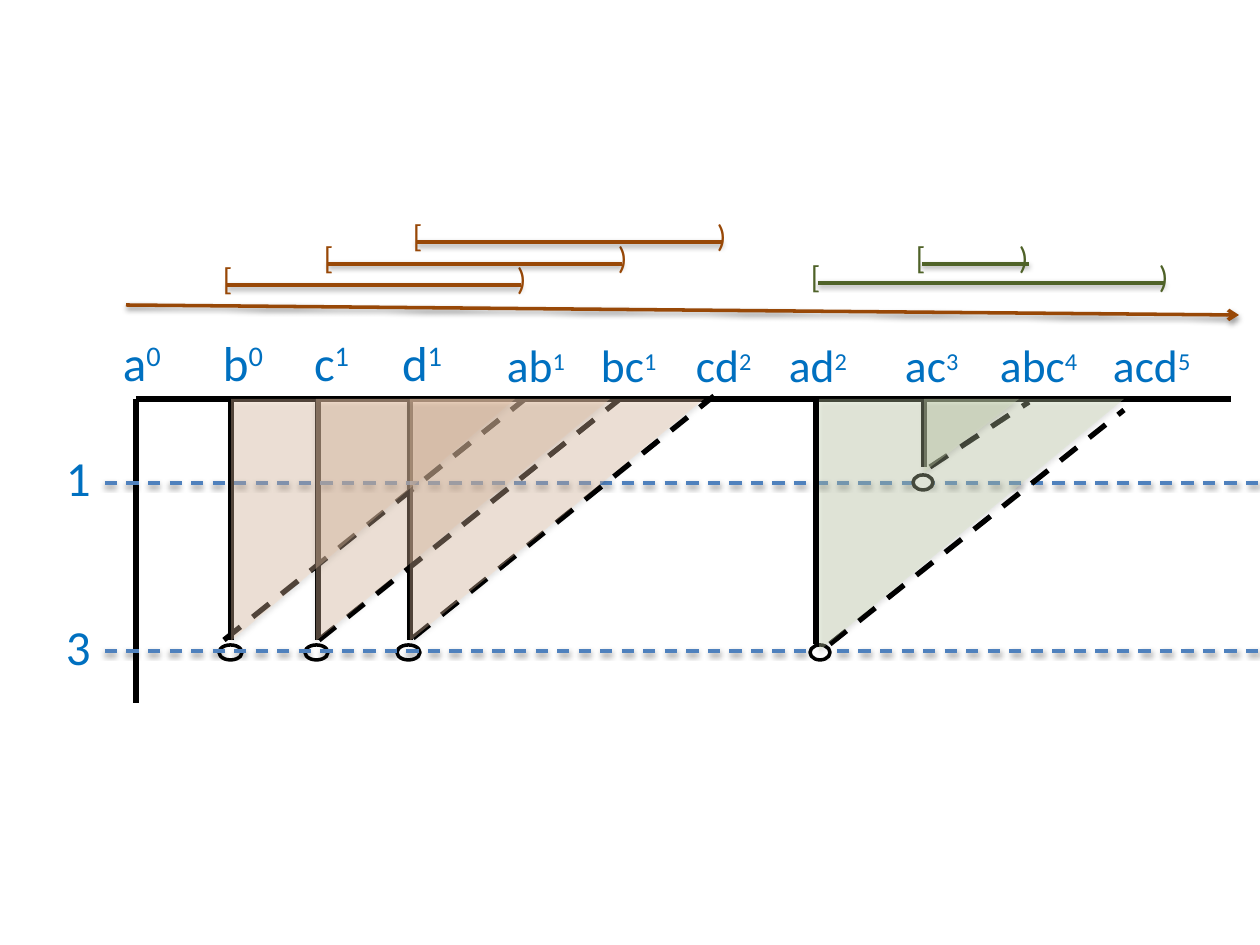
"""Build the slide of simplex lifetimes drawn as a merge diagram with bars."""
from lxml import etree
from pptx import Presentation
from pptx import util as u
from pptx.dml.color import RGBColor
from pptx.enum import dml, shapes, text
from pptx.oxml import ns

BLUE = RGBColor(0x00, 0x70, 0xC0)
LEVEL_BLUE = RGBColor(0x4F, 0x81, 0xBD)
BLACK = RGBColor(0, 0, 0)
WHITE = RGBColor(255, 255, 255)
BROWN = RGBColor(0x98, 0x48, 0x07)
GREEN = RGBColor(0x4F, 0x62, 0x28)
PEACH = RGBColor(0xFC, 0xD5, 0xB5)
LIME = RGBColor(0xD7, 0xE4, 0xBD)

PX = 914400 / 126
LINE_SHADOW = (38, 20000)
TRIANGLE_SHADOW = (35, 23000)

# name, exponent, left, width
VERTICES = [("a", "0", 110, 79), ("b", "0", 210, 79), ("c", "1", 301, 79), ("d", "1", 389, 79)]
SIMPLICES = [("ab", "1", 494, 113), ("bc", "1", 588, 84), ("cd", "2", 683, 84),
             ("ad", "2", 776, 126), ("ac", "3", 892, 126),
             ("abc", "4", 987, 127), ("acd", "5", 1100, 127)]
LEVELS = [("3", 610, 651), ("1", 441, 483)]
AXES = [(136, 399, 1231, 399), (136, 399, 136, 703)]

# stem (x, top, bottom), slope (x1, y1, x2, y2), ring and triangle (x, y, w, h)
BROWN_BRANCHES = [
    ((231, 399, 640), (224, 640, 525, 399), (219, 645, 23, 15), (231, 399, 284, 242)),
    ((318, 399, 640), (319, 640, 620, 399), (305, 645, 23, 15), (316, 399, 294, 242)),
    ((410, 399, 640), (413, 638, 714, 396), (397, 645, 23, 15), (410, 399, 294, 242)),
]
GREEN_BRANCHES = [
    ((816, 402, 644), (830, 644, 1124, 410), (810, 645, 20, 15), (819, 399, 305, 252)),
    ((924, 399, 467), (930, 467, 1029, 402), (913, 475, 20, 15), (924, 399, 95, 73)),
]

# start, end, y, colour, "[" (left, width), ")" (left, width), inset
INTERVALS = [
    (227, 521, 285, BROWN, (210, 42), (504, 35), 13),
    (328, 622, 264, BROWN, (311, 42), (605, 35), 13),
    (417, 722, 242, BROWN, (400, 44), (704, 36), 13),
    (818, 1164, 283, GREEN, (798, 49), (1146, 35), 13),
    (922, 1029, 264, GREEN, (916, 15), (1019, 12), 0),
]


def px(*values):
    return [u.Emu(round(v * PX)) for v in values]


def effects(sp, shadow=None):
    lst = etree.SubElement(sp._element.spPr, ns.qn("a:effectLst"))
    if shadow:
        alpha, dist = shadow
        outer = etree.SubElement(lst, ns.qn("a:outerShdw"), blurRad="40000",
                                 dist=str(dist), dir="5400000", rotWithShape="0")
        clr = etree.SubElement(outer, ns.qn("a:srgbClr"), val="000000")
        etree.SubElement(clr, ns.qn("a:alpha"), val=str(alpha * 1000))


def line(s, ends, color=BLACK, width=3, dash=False, shadow=None):
    c = s.shapes.add_connector(shapes.MSO_CONNECTOR.STRAIGHT, *px(*ends))
    c.line.color.rgb = color
    c.line.width = u.Pt(width)
    if dash:
        c.line.dash_style = dml.MSO_LINE.DASH
    effects(c, shadow)
    return c


def label(s, box, runs, color=BLUE, inset=13, wrap=True):
    tf = s.shapes.add_textbox(*px(*box)).text_frame
    margin = px(inset)[0]
    for key, value in dict(word_wrap=wrap, margin_left=margin, margin_right=margin,
                           vertical_anchor=text.MSO_ANCHOR.TOP).items():
        setattr(tf, key, value)
    for content, size, raised in runs:
        r = tf.paragraphs[0].add_run()
        r.text = content
        for key, value in dict(name="Calibri", size=u.Pt(size)).items():
            setattr(r.font, key, value)
        r.font.color.rgb = color
        if raised:
            r._r.get_or_add_rPr().set("baseline", "30000")


def branches(s, items):
    for (x, top, bottom), slope, ring, _ in items:
        line(s, (x, top, x, bottom))
        line(s, slope, dash=True)
        sp = s.shapes.add_shape(shapes.MSO_SHAPE.OVAL, *px(*ring))
        sp.shadow.inherit = False
        sp.fill.solid()
        sp.fill.fore_color.rgb = WHITE
        sp.line.color.rgb = BLACK
        sp.line.width = u.Pt(2)


def triangles(s, items, color):
    for *_, (x, y, w, h) in items:
        sp = s.shapes.add_shape(shapes.MSO_SHAPE.RIGHT_TRIANGLE,
                                *px(x + (w - h) / 2, y + (h - w) / 2, h, w))
        sp.rotation = 90
        sp.fill.solid()
        sp.fill.fore_color.rgb = color
        clr = sp._element.spPr.find(".//" + ns.qn("a:srgbClr"))
        etree.SubElement(clr, ns.qn("a:alpha"), val="32000")
        sp.line.fill.background()
        effects(sp, TRIANGLE_SHADOW)


def main():
    prs = Presentation()
    prs.slide_width, prs.slide_height = u.Inches(10), u.Inches(7.5)
    s = prs.slides.add_slide(prs.slide_layouts[6])

    for names, top, height, size, power in ((VERTICES, 326, 72, 28, 28),
                                            (SIMPLICES, 331, 68, 26, 24)):
        for name, exponent, x, w in names:
            label(s, (x, top, w, height), [(name, size, False), (exponent, power, True)])
    for axis in AXES:
        line(s, axis)
    branches(s, BROWN_BRANCHES)
    for name, top, y in LEVELS:
        label(s, (53, top, 53, 72), [(name, 28, False)])
        line(s, (105, y, 1260, y), LEVEL_BLUE, 1.75, True, LINE_SHADOW)
    triangles(s, BROWN_BRANCHES, PEACH)
    branches(s, GREEN_BRANCHES)
    triangles(s, GREEN_BRANCHES, LIME)

    arrow = line(s, (126, 305, 1239, 315), BROWN, 2, shadow=LINE_SHADOW)
    etree.SubElement(arrow.line._get_or_add_ln(), ns.qn("a:tailEnd"), type="arrow")
    for start, end, y, color, opening, closing, inset in INTERVALS:
        line(s, (start, y, end, y), color, 2, shadow=LINE_SHADOW)
        for sign, (x, w), wrap in (("[", opening, True), (")", closing, False)):
            label(s, (x, y - 32, w, 50), [(sign, 18, False)], color, inset, wrap)
    prs.save("out.pptx")


if __name__ == "__main__":
    main()
